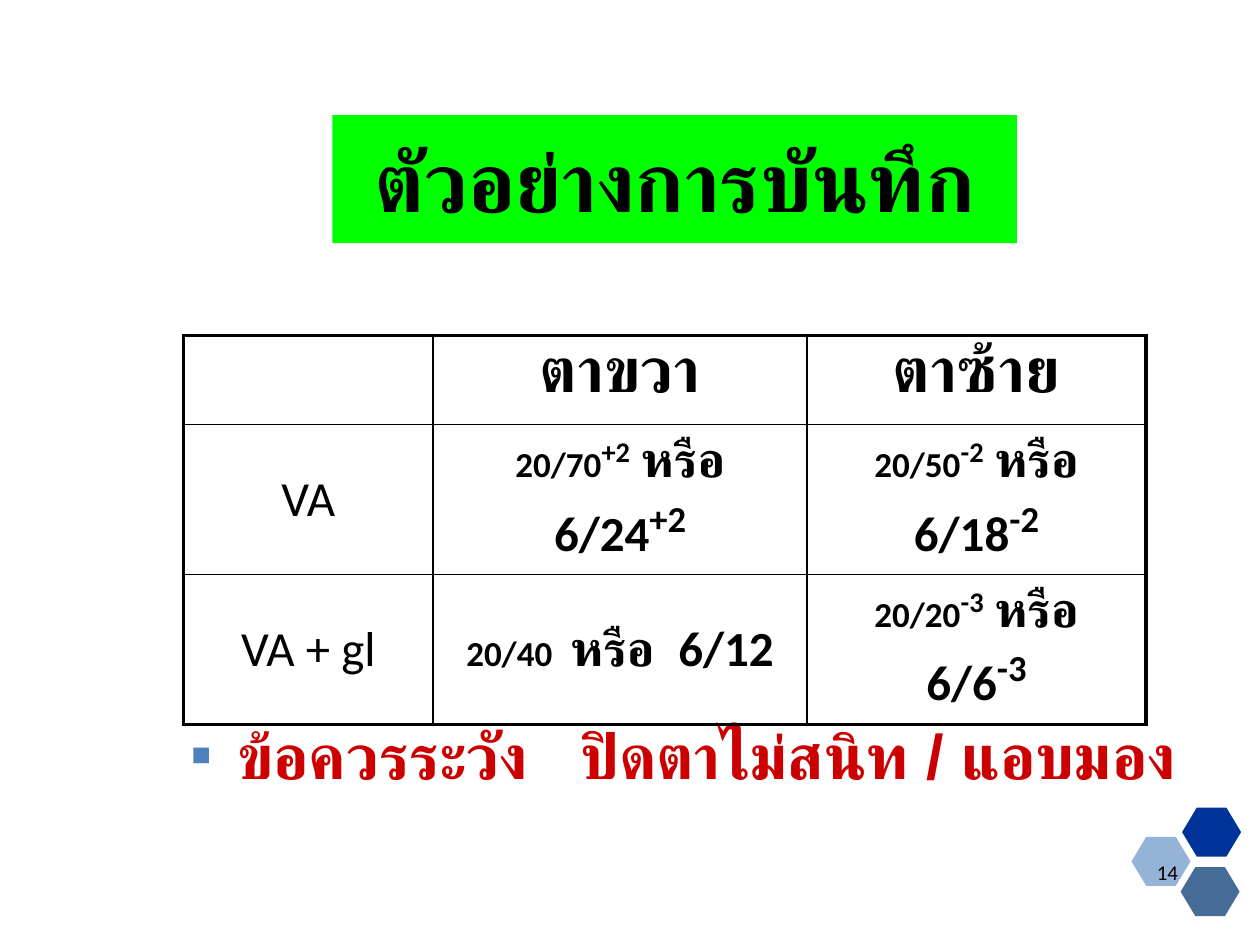
from lxml.etree import SubElement as Sub
from pptx import Presentation as Deck
from pptx.dml.color import RGBColor
from pptx.enum.shapes import MSO_SHAPE as Kind
from pptx.enum.text import MSO_ANCHOR as Anchor, MSO_AUTO_SIZE as Auto, PP_ALIGN as Align
from pptx.oxml.ns import qn
from pptx.util import Cm, Pt

BLACK = "000000"
NOTE = dict(name="Arial", size=36, color="CC0000")
WORD = "หรือ"


def paint(fill, hue):
    fill.solid()
    fill.fore_color.rgb = RGBColor.from_string(hue)


def box(*dims):
    return [Cm(d) for d in dims]


def eye(main, sup, metre):
    return [(main, dict(size=20)), (sup, dict(rise=30)), (" " + WORD, {}), ("\n", {}),
            (metre, {}), (sup, dict(size=36, rise=30))]


class Page:
    """Hold the text style and the current slide, and add its elements."""

    base = dict(name="Calibri", size=28, bold=True, color=BLACK)

    def __init__(self, deck):
        self.slide = deck.slides.add_slide(deck.slide_layouts[1])

    def put(self, para, runs, align=Align.CENTER):
        para.alignment = align
        for text, style in runs:
            if text == "\n":
                para.add_line_break()
                continue
            run = para.add_run()
            run.text = text
            form = {**self.base, **style}
            props = run._r.get_or_add_rPr()
            for key, name, unit in (("rise", "baseline", 1000), ("gap", "spc", 100)):
                if key in form:
                    props.set(name, str(form.pop(key) * unit))
            paint(run.font.fill, form.pop("color"))
            form["size"] = Pt(form["size"])
            for key, value in form.items():
                setattr(run.font, key, value)

    def place(self, shape, dims):
        for key, value in zip(("left", "top", "width", "height"), box(*dims)):
            setattr(shape, key, value)
        frame = shape.text_frame
        form = dict(word_wrap=True, auto_size=Auto.NONE, vertical_anchor=Anchor.MIDDLE)
        for key, value in form.items():
            setattr(frame, key, value)
        return frame.paragraphs[0]

    def title(self, runs, dims, hue):
        shape = self.slide.shapes.title
        paint(shape.fill, hue)
        self.put(self.place(shape, dims), runs)

    def bullet(self, runs, dims, hue):
        para = self.place(self.slide.placeholders[1], dims)
        para.space_before = Pt(0)
        props = para._p.get_or_add_pPr()
        props.set("marL", str(Cm(0.95)))
        props.set("indent", str(Cm(-0.95)))
        Sub(Sub(props, qn("a:buClr")), qn("a:srgbClr"), val=hue)
        Sub(props, qn("a:buFont"), typeface="Arial")
        Sub(props, qn("a:buChar"), char="▪")
        self.put(para, runs, Align.LEFT)

    def hexagon(self, left, top, hue, alpha=100):
        shape = self.slide.shapes.add_shape(Kind.HEXAGON, *box(left, top, 1.19, 0.99))
        shape.shadow.inherit = False
        shape.adjustments[0] = 0.3
        shape.line.fill.background()
        paint(shape.fill, hue)
        if alpha < 100:
            tone = shape._element.spPr.find(".//" + qn("a:srgbClr"))
            Sub(tone, qn("a:alpha"), val=str(alpha * 1000))

    def label(self, text, dims, **style):
        shape = self.slide.shapes.add_textbox(*box(*dims))
        self.put(self.place(shape, dims), [(text, style)], Align.RIGHT)

    def border(self, cell, edges):
        props = cell._tc.get_or_add_tcPr()
        for spot, (side, outer) in enumerate(edges.items()):
            line = Sub(props, qn("a:ln" + side), w=str(Pt(2.25 if outer else 1)))
            Sub(Sub(line, qn("a:solidFill")), qn("a:srgbClr"), val=BLACK)
            props.remove(line)
            props.insert(spot, line)

    def table(self, rows, left, top, wide, high):
        dims = box(left, top, sum(wide), sum(high))
        grid = self.slide.shapes.add_table(len(rows), len(wide), *dims).table
        for col, width in zip(grid.columns, wide):
            col.width = Cm(width)
        for r, row in enumerate(rows):
            grid.rows[r].height = Cm(high[r])
            for c, runs in enumerate(row):
                cell = grid.cell(r, c)
                cell.fill.background()
                cell.vertical_anchor = Anchor.MIDDLE if r else Anchor.TOP
                self.border(cell, dict(L=c == 0, R=c == len(wide) - 1,
                                       T=r == 0, B=r == len(rows) - 1))
                self.put(cell.text_frame.paragraphs[0], runs)


def main():
    deck = Deck()
    deck.slide_width, deck.slide_height = box(25.4, 19.05)
    page = Page(deck)
    for hexa in ((22.81, 16.87, "95B3D7"), (23.83, 16.28, "003399"),
                 (23.8, 17.48, "376092", 93)):
        page.hexagon(*hexa)
    page.bullet([("ข้อควรระวัง", NOTE), (" ", dict(NOTE, gap=20)),
                 ("ปิดตาไม่สนิท / แอบมอง", NOTE)], (3.58, 14.2, 21.4, 2), "4F81BD")
    page.title([("ตัวอย่าง", dict(name="Arial", size=48)), ("การบันทึก", dict(size=48))],
               (6.7, 2.32, 13.8, 2.58), "00FF00")
    head, thin = dict(size=36), dict(bold=False)
    page.table([
        [[], [("ตาขวา", head)], [("ตาซ้าย", head)]],
        [[("VA", thin)], eye("20/70", "+2", "6/24"), eye("20/50", "-2", "6/18")],
        [[("VA + gl", thin)],
         [("20/40", dict(size=20)), (" ", dict(gap=4)), (WORD, {}), (" ", dict(gap=6)),
          ("6/12", {})],
         eye("20/20", "-3", "6/6")],
    ], 3.7, 6.76, (5.03, 7.54, 6.83), (1.8, 3.02, 3.02))
    page.label("14", (22.63, 17.07, 1.37, 1.02), size=12, bold=False)
    deck.save("out.pptx")


if __name__ == "__main__":
    main()
